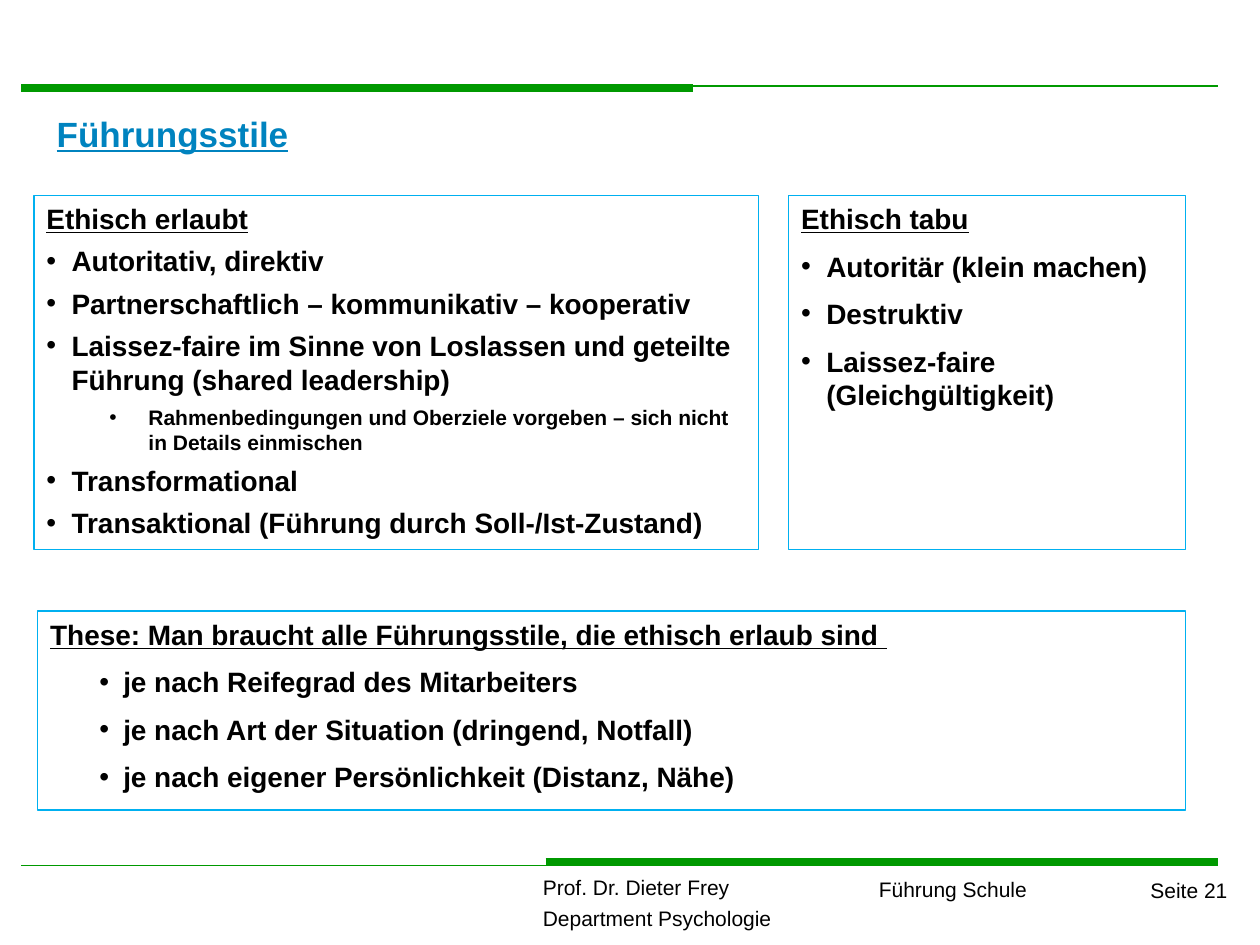
from dataclasses import dataclass

from lxml import etree
from pptx import Presentation
from pptx.dml.color import RGBColor
from pptx.enum.shapes import MSO_CONNECTOR, MSO_SHAPE
from pptx.enum.text import MSO_ANCHOR, PP_ALIGN
from pptx.oxml.ns import qn
from pptx.util import Inches, Pt

GREEN = RGBColor(0x00, 0x99, 0x00)
BLUE = RGBColor(0x00, 0x83, 0xBF)
CYAN = RGBColor(0x00, 0xB0, 0xF0)
BLACK = RGBColor(0x00, 0x00, 0x00)
LEFT, RIGHT = PP_ALIGN.LEFT, PP_ALIGN.RIGHT
TOP = MSO_ANCHOR.TOP
STRAIGHT = MSO_CONNECTOR.STRAIGHT
RECT = MSO_SHAPE.RECTANGLE


@dataclass
class Rule:
    x1: float
    x2: float
    y: float
    width: float


@dataclass
class Footer:
    box: tuple[float, float, float, float]
    lines: list[str]
    align: PP_ALIGN = LEFT
    spacing: float = 0.8


@dataclass
class Item:
    text: str
    size: float = 16
    margin: float = 0.2
    hang: float = 0.2
    level: int = 0


@dataclass
class Panel:
    box: tuple[float, float, float, float]
    heading: str
    items: list[Item]
    before: float = 0
    after: float = 0


def add_text(tf, text: str, *, first=False, size=16, color=BLACK, bold=False,
             underline=False, align=LEFT, bullet=False, margin=0, hang=0,
             level=0, before=0, after=0, spacing=None) -> None:
    """Write one formatted paragraph into a text frame."""
    p = tf.paragraphs[0] if first else tf.add_paragraph()
    pPr = p._p.get_or_add_pPr()
    pPr.set("marL", str(Inches(margin)))
    pPr.set("indent", str(Inches(-hang)))
    if bullet:
        etree.SubElement(pPr, qn("a:buFont")).set("typeface", "Arial")
        etree.SubElement(pPr, qn("a:buChar")).set("char", "•")
    p.level = level
    p.alignment = align
    p.space_before = Pt(0 if first else before)
    p.space_after = Pt(after)
    if spacing:
        p.line_spacing = spacing
    r = p.add_run()
    r.text = text
    r.font.name = "Arial"
    r.font.size = Pt(size)
    r.font.bold = bold
    r.font.underline = underline
    r.font.color.rgb = color


def add_rule(s, rule: Rule) -> None:
    y = Inches(rule.y)
    line = s.shapes.add_connector(STRAIGHT, Inches(rule.x1), y, Inches(rule.x2), y)
    line.line.color.rgb = GREEN
    line.line.width = Pt(rule.width)
    etree.SubElement(line._element.spPr, qn("a:effectLst"))


def add_footer(s, footer: Footer) -> None:
    tf = s.shapes.add_textbox(*map(Inches, footer.box)).text_frame
    tf.word_wrap = True
    for i, text in enumerate(footer.lines):
        add_text(tf, text, first=i == 0, size=12, align=footer.align,
                 before=6, spacing=footer.spacing)


def add_panel(s, panel: Panel) -> None:
    sp = s.shapes.add_shape(RECT, *map(Inches, panel.box))
    sp.shadow.inherit = False
    sp.fill.background()
    sp.line.color.rgb = CYAN
    sp.line.width = Pt(0.75)
    tf = sp.text_frame
    tf.word_wrap = True
    tf.vertical_anchor = TOP
    add_text(tf, panel.heading, first=True, bold=True, underline=True,
             margin=0.2, hang=0.2, after=panel.after)
    for item in panel.items:
        add_text(tf, item.text, size=item.size, bold=True, bullet=True,
                 margin=item.margin, hang=item.hang, level=item.level,
                 before=panel.before, after=panel.after)


RULES = [
    Rule(3.83, 9.67, 0.68, 1), Rule(0.17, 5.5, 0.7, 4.5),
    Rule(0.17, 6.17, 6.87, 1), Rule(4.33, 9.67, 6.84, 4.5),
]
FOOTERS = [
    Footer((6.02, 6.95, 2.23, 0.26), ["Führung Schule"], RIGHT),
    Footer((4.21, 6.93, 3.62, 0.52),
           ["Prof. Dr. Dieter Frey", "Department Psychologie"]),
    Footer((7.92, 6.97, 1.92, 0.24), ["Seite 21"], RIGHT, 0.7),
]
PANELS = [
    Panel((0.27, 1.55, 5.75, 2.81), "Ethisch erlaubt", [
        Item("Autoritativ, direktiv"),
        Item("Partnerschaftlich – kommunikativ – kooperativ"),
        Item("Laissez-faire im Sinne von Loslassen und geteilte Führung "
             "(shared leadership)"),
        Item("Rahmenbedingungen und Oberziele vorgeben – sich nicht in "
             "Details einmischen", size=12, margin=0.81, hang=0.31, level=1),
        Item("Transformational"),
        Item("Transaktional (Führung durch Soll-/Ist-Zustand)"),
    ], after=5),
    Panel((6.26, 1.55, 3.15, 2.81), "Ethisch tabu", [
        Item("Autoritär (klein machen)"),
        Item("Destruktiv"),
        Item("Laissez-faire (Gleichgültigkeit)"),
    ], before=8),
    Panel((0.3, 4.85, 9.11, 1.58),
          "These: Man braucht alle Führungsstile, die ethisch erlaub sind ", [
              Item(text, margin=0.58, hang=0.19) for text in (
                  "je nach Reifegrad des Mitarbeiters",
                  "je nach Art der Situation (dringend, Notfall)",
                  "je nach eigener Persönlichkeit (Distanz, Nähe)")
          ], before=8),
]


def main() -> None:
    prs = Presentation()
    prs.slide_width, prs.slide_height = Inches(10), Inches(7.5)
    s = prs.slides.add_slide(prs.slide_layouts[5])

    # Green rules and footer texts
    for rule in RULES:
        add_rule(s, rule)
    for footer in FOOTERS:
        add_footer(s, footer)

    # Title
    title = s.shapes.title
    title.left, title.top = Inches(0.35), Inches(0.84)
    title.width, title.height = Inches(9.06), Inches(0.89)
    title.text_frame.vertical_anchor = TOP
    add_text(title.text_frame, "Führungsstile", first=True, size=20,
             color=BLUE, bold=True, underline=True)

    # Framed lists
    for panel in PANELS:
        add_panel(s, panel)

    prs.save("out.pptx")


if __name__ == "__main__":
    main()
